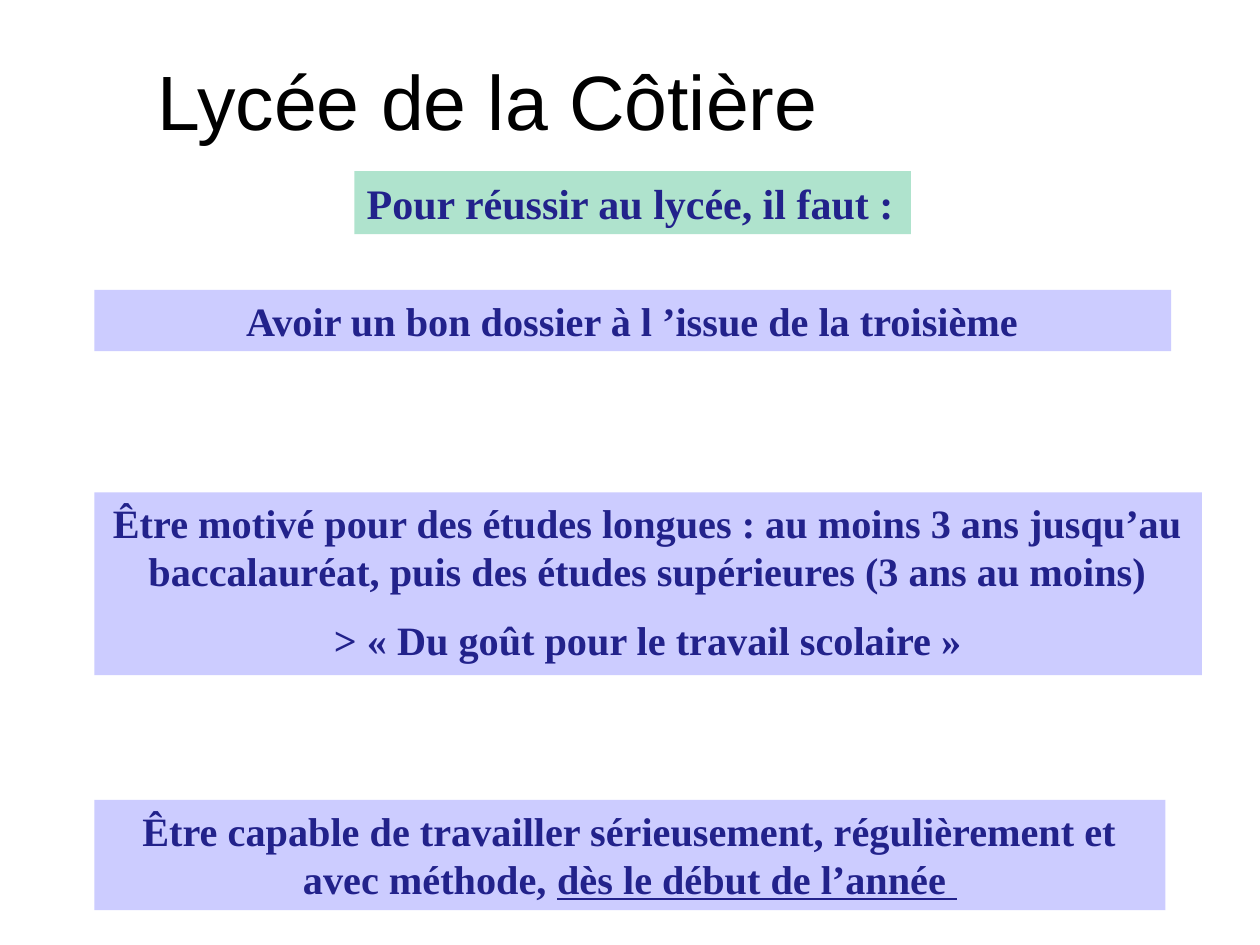
from lxml.etree import SubElement
from pptx import Presentation
from pptx.dml.color import RGBColor as Rgb
from pptx.enum.shapes import MSO_SHAPE as Shape
from pptx.enum.text import MSO_ANCHOR as Anchor, PP_ALIGN as Align
from pptx.oxml.ns import qn
from pptx.util import Pt

COLORS = {"black": "000000", "navy": "22228B", "green": "60C99C", "lilac": "CCCCFF"}


def write(frame, paras, size=23, font="Times New Roman", color="navy",
          bold=True, align=Align.CENTER, anchor=Anchor.TOP, gap=11.5):
    """Fill a frame with paragraphs, each a list of (text, underline) runs."""
    frame.word_wrap = True
    frame.vertical_anchor = anchor
    for i, runs in enumerate(paras):
        para = frame.paragraphs[0] if i == 0 else frame.add_paragraph()
        para.alignment = align
        if i:
            para.space_before = Pt(gap)
        for text, under in runs:
            run = para.add_run()
            run.text = text
            face = run.font
            face.name, face.size, face.bold = font, Pt(size), bold
            face.color.rgb = Rgb.from_string(COLORS[color])
            if under:
                face.underline = True


def add_title(slide, box, text):
    """Place the school name in its box."""
    frame = slide.shapes.add_textbox(*map(Pt, box)).text_frame
    write(frame, [[(text, False)]], size=44, font="Arial", color="black",
          bold=False, anchor=Anchor.MIDDLE)


def add_band(slide, box, paras, fill="lilac", alpha=100, **style):
    """Place a filled band with its text."""
    band = slide.shapes.add_shape(Shape.RECTANGLE, *map(Pt, box))
    band.shadow.inherit = False
    band.line.fill.background()
    band.fill.solid()
    band.fill.fore_color.rgb = Rgb.from_string(COLORS[fill])
    if alpha < 100:
        tone = next(band.fill._xPr.iter(qn("a:srgbClr")))
        SubElement(tone, qn("a:alpha"), val=str(alpha * 1000))
    write(band.text_frame, paras, **style)


def main():
    """Build the slide and save it."""
    deck = Presentation()
    deck.slide_width, deck.slide_height = Pt(720), Pt(540)
    slide = deck.slides.add_slide(deck.slide_layouts[6])
    add_title(slide, (23.8, 12.2, 509.8, 90), "Lycée de la Côtière")
    add_band(slide, (202.5, 97.8, 318, 36), [[("Pour réussir au lycée, il faut :", False)]],
             fill="green", alpha=50, size=24, align=Align.LEFT)
    left = 54
    needs = [
        (165.7, 615.3, 35, [[("Avoir un bon dossier à l ’issue de la troisième", False)]]),
        (281.3, 632.8, 104.5, [
            [("Être motivé pour des études longues : au moins 3 ans jusqu’au "
              "baccalauréat, puis des études supérieures (3 ans au moins)", False)],
            [("> « Du goût pour le travail scolaire »", False)]]),
        (457.1, 612, 63, [
            [("Être capable de travailler sérieusement, régulièrement et avec méthode, ", False),
             ("dès le début de l’année ", True)]]),
    ]
    for top, width, height, paras in needs:
        add_band(slide, (left, top, width, height), paras)
    deck.save("out.pptx")


if __name__ == "__main__":
    main()
